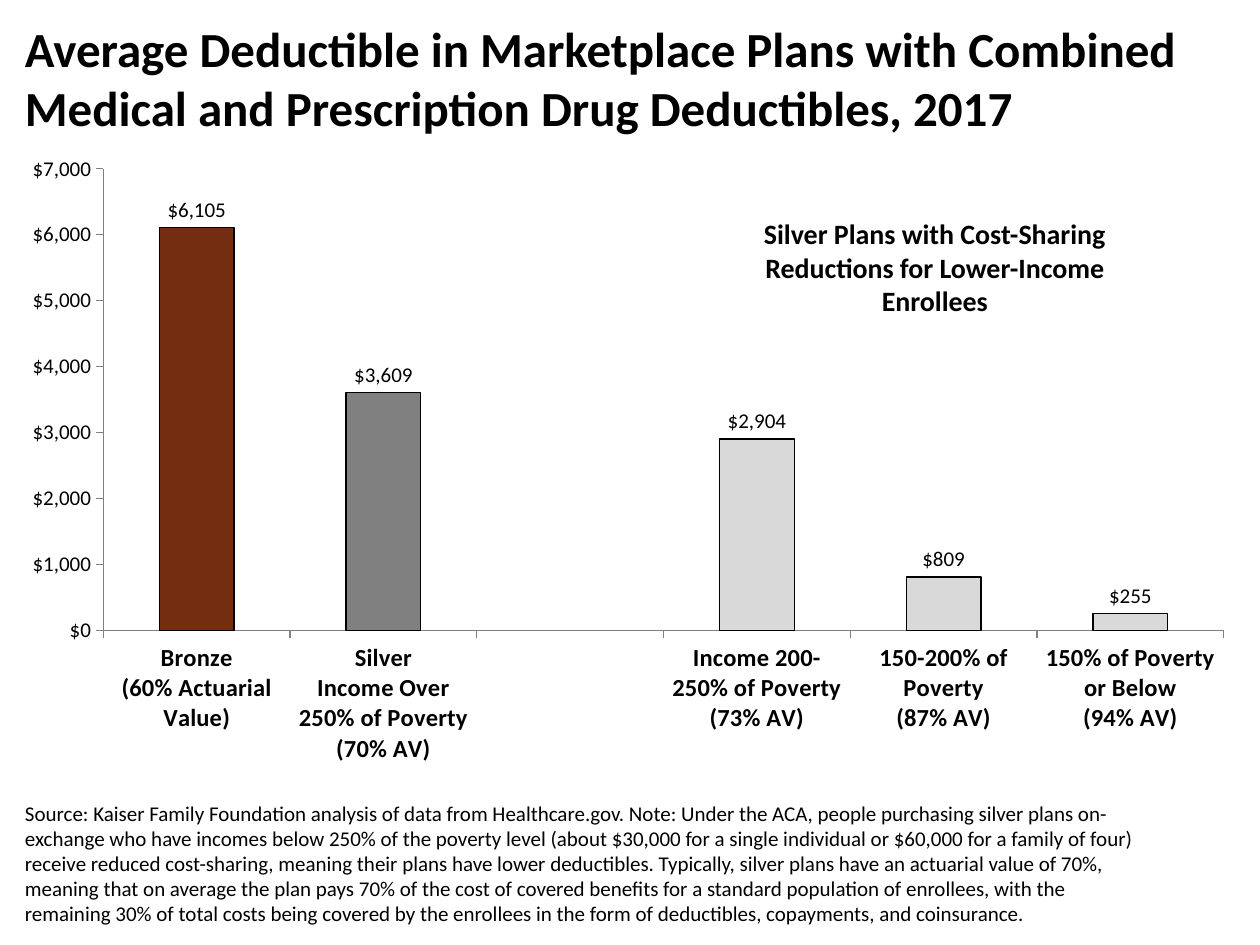
"""Build the slide on average deductibles in marketplace plans."""
from dataclasses import dataclass
from typing import Optional

from lxml import etree
from pptx import Presentation
from pptx import util as u
from pptx.chart import data
from pptx.dml.color import RGBColor
from pptx.enum import chart as ch, text
from pptx.oxml import ns

PX = u.Inches(1) // 100
FONT = "Calibri"
MONEY = '"$"#,##0'
BLACK = RGBColor(0x00, 0x00, 0x00)
RUST = RGBColor(0x73, 0x2D, 0x10)
GRAY = RGBColor(0x80, 0x80, 0x80)
PALE = RGBColor(0xD9, 0xD9, 0xD9)
BLUE = RGBColor(0x13, 0x35, 0x59)
PLOT = {"x": 0.076, "y": 0.034, "w": 0.912, "h": 0.733}


@dataclass
class Label:
    box: tuple[int, int, int, int]
    words: str
    size: int
    bold: bool = True
    align: text.PP_ALIGN = text.PP_ALIGN.LEFT
    anchor: text.MSO_ANCHOR = text.MSO_ANCHOR.TOP


@dataclass
class Bar:
    name: str
    value: Optional[int] = None
    fill: RGBColor = BLUE


LABELS = [
    Label((10, 680, 910, 60),
          "Source: Kaiser Family Foundation analysis of data from Healthcare.gov. "
          "Note: Under the ACA, people purchasing silver plans on-exchange who have "
          "incomes below 250% of the poverty level (about $30,000 for a single "
          "individual or $60,000 for a family of four) receive reduced cost-sharing, "
          "meaning their plans have lower deductibles. Typically, silver plans have "
          "an actuarial value of 70%, meaning that on average the plan pays 70% of "
          "the cost of covered benefits for a standard population of enrollees, with "
          "the remaining 30% of total costs being covered by the enrollees in the "
          "form of deductibles, copayments, and coinsurance.",
          12, bold=False, anchor=text.MSO_ANCHOR.BOTTOM),
    Label((10, 10, 980, 100),
          "Average Deductible in Marketplace Plans with Combined Medical and "
          "Prescription Drug Deductibles, 2017", 28),
    Label((567, 167, 350, 91),
          "Silver Plans with Cost-Sharing Reductions for Lower-Income Enrollees",
          16, align=text.PP_ALIGN.CENTER),
]
BARS = [
    Bar("Bronze\n(60% Actuarial Value)", 6105, RUST),
    Bar("Silver\nIncome Over 250% of Poverty\n(70% AV)", 3609, GRAY),
    Bar(""),
    Bar("Income 200-250% of Poverty\n(73% AV)", 2904, PALE),
    Bar("150-200% of Poverty\n(87% AV)", 809, PALE),
    Bar("150% of Poverty or Below\n(94% AV)", 255, PALE),
]


def scale(box: tuple[int, int, int, int]) -> list[int]:
    """Turn px into EMU."""
    return [side * PX for side in box]


def style(font, size: int, bold: bool = False) -> None:
    """Set face, size, weight and colour."""
    font.name, font.size, font.bold = FONT, u.Pt(size), bold
    font.color.rgb = BLACK


def write(slide, label: Label) -> None:
    """Draw one text box."""
    frame = slide.shapes.add_textbox(*scale(label.box)).text_frame
    frame.word_wrap = True
    frame.vertical_anchor = label.anchor
    frame.text = label.words
    para = frame.paragraphs[0]
    para.alignment = label.align
    style(para.runs[0].font, label.size, label.bold)


def place(chart) -> None:
    """Fix the inner plot area by fractions of the chart."""
    area = chart._chartSpace.chart.plotArea
    for old in area.findall(ns.qn("c:layout")):
        area.remove(old)
    layout = etree.Element(ns.qn("c:layout"))
    area.insert(0, layout)
    manual = etree.SubElement(layout, ns.qn("c:manualLayout"))
    rules = {"layoutTarget": "inner", "xMode": "edge", "yMode": "edge", **PLOT}
    for tag, value in rules.items():
        etree.SubElement(manual, ns.qn(f"c:{tag}")).set("val", str(value))


def graph(slide, bars: list[Bar], box: tuple[int, int, int, int]) -> None:
    """Draw the column chart."""
    table = data.CategoryChartData()
    table.categories = [bar.name for bar in bars]
    table.add_series("Series 1", [bar.value for bar in bars])
    chart = slide.shapes.add_chart(
        ch.XL_CHART_TYPE.COLUMN_CLUSTERED, *scale(box), table).chart
    chart.has_legend = chart.has_title = False
    style(chart.font, 18)
    place(chart)

    for axis, size, bold in ((chart.category_axis, 14, True),
                             (chart.value_axis, 12, False)):
        axis.has_major_gridlines = False
        axis.major_tick_mark = ch.XL_TICK_MARK.OUTSIDE
        axis.format.line.color.rgb = GRAY
        axis.format.line.width = u.Pt(0.75)
        style(axis.tick_labels.font, size, bold)
    axis = chart.value_axis
    axis.minimum_scale, axis.maximum_scale, axis.major_unit = 0, 7000, 1000
    axis.tick_labels.number_format = MONEY
    axis.tick_labels.number_format_is_linked = False

    plot = chart.plots[0]
    plot.gap_width, plot.vary_by_categories = 150, False
    series = plot.series[0]
    for part, fill in [(series, BLUE)] + [
            (series.points[i], bar.fill) for i, bar in enumerate(bars) if bar.value]:
        part.format.fill.solid()
        part.format.fill.fore_color.rgb = fill
        part.format.line.color.rgb = BLACK
        part.format.line.width = u.Pt(0.75)
    tags = series.data_labels
    tags.show_value = True
    tags.position = ch.XL_LABEL_POSITION.OUTSIDE_END
    tags.number_format, tags.number_format_is_linked = MONEY, False
    style(tags.font, 12)


def main() -> None:
    """Build and save the slide."""
    deck = Presentation()
    deck.slide_width, deck.slide_height = 1000 * PX, 750 * PX
    slide = deck.slides.add_slide(deck.slide_layouts[6])
    graph(slide, BARS, (8, 117, 975, 500))
    for label in LABELS:
        write(slide, label)
    deck.save("out.pptx")


if __name__ == "__main__":
    main()
